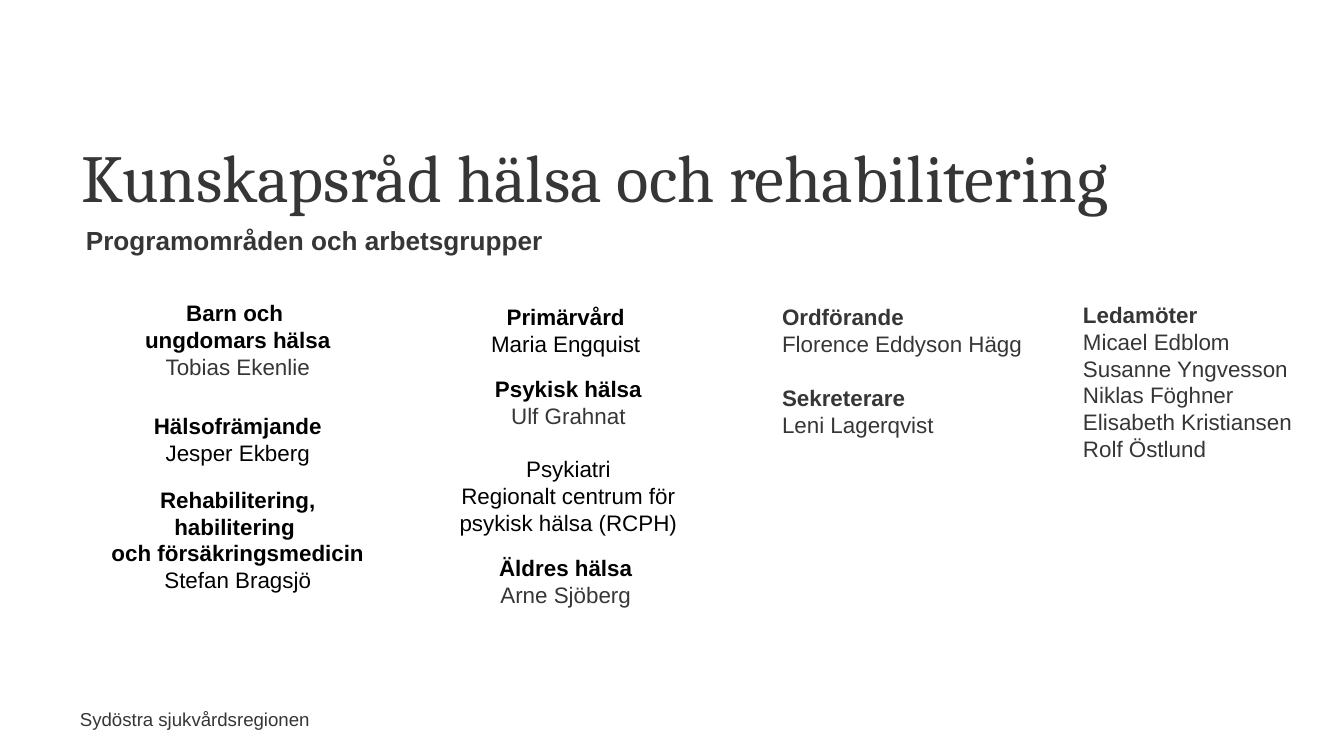
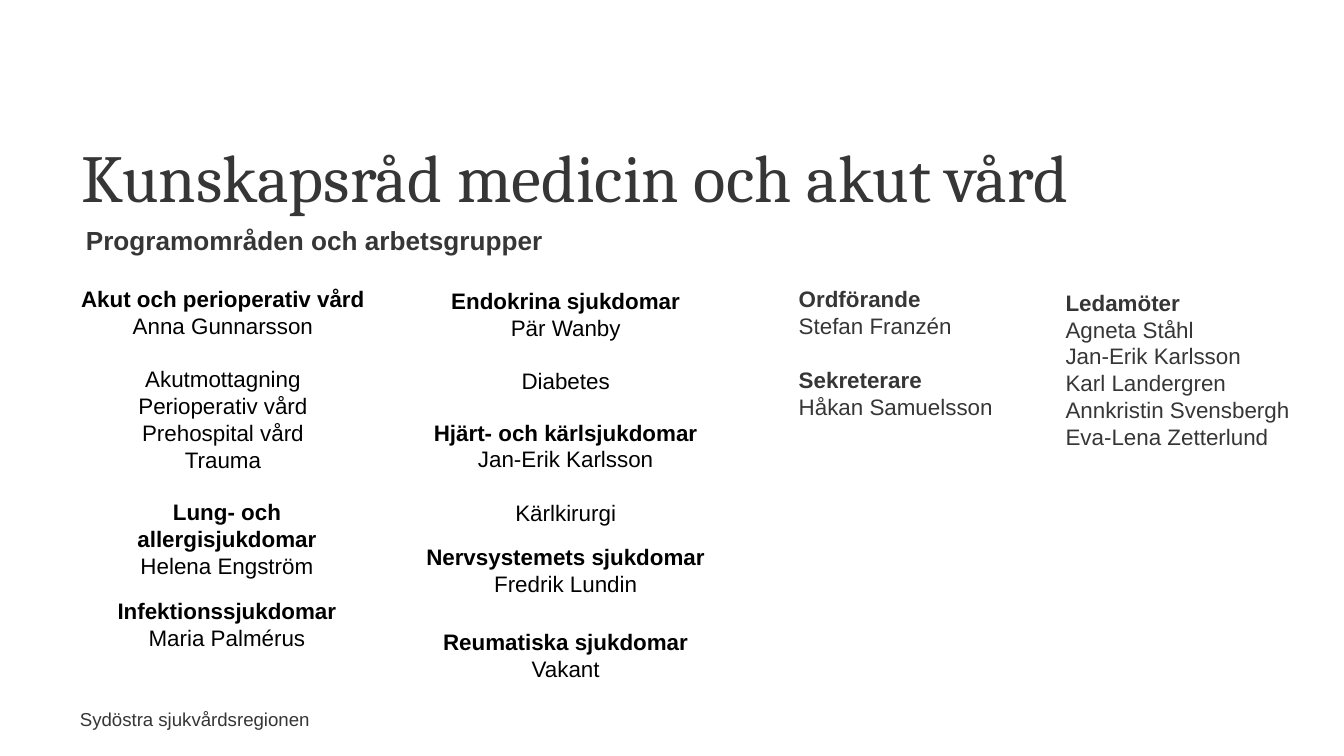
from dataclasses import dataclass
from typing import NamedTuple

from pptx import Presentation
from pptx.dml.color import RGBColor
from pptx.enum.shapes import MSO_SHAPE
from pptx.enum.text import MSO_ANCHOR, MSO_AUTO_SIZE, PP_ALIGN
from pptx.util import Inches, Pt

ROUND = MSO_SHAPE.ROUNDED_RECTANGLE
TOP, MIDDLE = MSO_ANCHOR.TOP, MSO_ANCHOR.MIDDLE
GROW = MSO_AUTO_SIZE.SHAPE_TO_FIT_TEXT
LEFT, CENTER, RIGHT = PP_ALIGN.LEFT, PP_ALIGN.CENTER, PP_ALIGN.RIGHT

WHITE = RGBColor(0xFF, 0xFF, 0xFF)
BLACK = RGBColor(0x00, 0x00, 0x00)
GRAY = RGBColor(0x36, 0x36, 0x36)

SANS, SERIF = "Arial", "Cambria"
BODY = 12
GAP = Pt(14.4)

PAGE = Inches(10)
WIDE = 2.36
LOW, MID = 0.59, 0.79
COL_A, COL_B, COL_C = 0.59, 3.03, 0.51


class Area(NamedTuple):
    left: float
    top: float
    width: float
    height: float


class Line(NamedTuple):
    text: str
    bold: bool = False
    tint: RGBColor = BLACK
    gap: bool = False
    size: int = BODY
    face: str = SANS


@dataclass
class Card:
    area: Area
    head: str
    name: str
    tint: RGBColor = BLACK
    groups: tuple[str, ...] = ()

    def lines(self) -> list[Line]:
        extra = [Line(text, gap=i == 0) for i, text in enumerate(self.groups)]
        return [Line(self.head, True), Line(self.name, tint=self.tint), *extra]


@dataclass
class Council:
    title: str
    cards: list[Card]
    lead_area: Area
    chair: str
    clerk: str
    list_area: Area
    members: list[str]


COUNCILS = [
    Council(
        "Kunskapsråd hälsa och rehabilitering",
        [
            Card(Area(COL_A, 3.62, WIDE, MID),
                 "Rehabilitering, habilitering \voch försäkringsmedicin", "Stefan Bragsjö"),
            Card(Area(COL_B, 4.03, WIDE, LOW), "Äldres hälsa", "Arne Sjöberg", GRAY),
            Card(Area(COL_B, 2.16, WIDE, LOW), "Primärvård", "Maria Engquist"),
            Card(Area(3.05, 2.8, WIDE, 1.18), "Psykisk hälsa", "Ulf Grahnat", GRAY,
                 ("Psykiatri", "Regionalt centrum för psykisk hälsa (RCPH)")),
            Card(Area(COL_A, 2.13, WIDE, MID),
                 "Barn och \vungdomars hälsa", "Tobias Ekenlie", GRAY),
            Card(Area(COL_A, 2.97, WIDE, LOW), "Hälsofrämjande", "Jesper Ekberg"),
        ],
        Area(5.6, 2.09, 3.15, 2.46), "Florence Eddyson Hägg", "Leni Lagerqvist",
        Area(7.96, 2.19, 1.77, 1.51),
        ["Micael Edblom", "Susanne Yngvesson", "Niklas Föghner",
         "Elisabeth Kristiansen", "Rolf Östlund"],
    ),
    Council(
        "Kunskapsråd medicin och akut vård",
        [
            Card(Area(COL_B, 3.12, WIDE, MID), "Hjärt- och kärlsjukdomar",
                 "Jan-Erik Karlsson", groups=("Kärlkirurgi",)),
            Card(Area(COL_B, 3.95, WIDE, LOW), "Nervsystemets sjukdomar", "Fredrik Lundin"),
            Card(Area(COL_C, 4.35, WIDE, LOW), "Infektionssjukdomar", "Maria Palmérus"),
            Card(Area(COL_C, 3.71, WIDE, LOW), "Lung- och allergisjukdomar",
                 "Helena Engström"),
            Card(Area(0.28, 2.13, 2.76, 1.38), "Akut och perioperativ vård",
                 "Anna Gunnarsson",
                 groups=("Akutmottagning", "Perioperativ vård", "Prehospital vård", "Trauma")),
            Card(Area(COL_B, 2.14, WIDE, MID), "Endokrina sjukdomar", "Pär Wanby",
                 groups=("Diabetes",)),
            Card(Area(COL_B, 4.58, WIDE, LOW), "Reumatiska sjukdomar", "Vakant"),
        ],
        Area(5.71, 1.94, 3.15, 2.76), "Stefan Franzén", "Håkan Samuelsson",
        Area(7.83, 2.1, 1.88, 1.51),
        ["Agneta Ståhl", "Jan-Erik Karlsson", "Karl Landergren",
         "Annkristin Svensbergh", "Eva-Lena Zetterlund"],
    ),
]


def write(frame, lines: list[Line], align: PP_ALIGN, anchor: MSO_ANCHOR, wrap: bool) -> None:
    frame.word_wrap = wrap
    frame.vertical_anchor = anchor
    for i, line in enumerate(lines):
        para = frame.add_paragraph() if i else frame.paragraphs[0]
        para.alignment = align
        if line.gap:
            para.space_before = GAP
        para.text = line.text
        font = para.font
        font.name, font.size, font.bold = line.face, Pt(line.size), line.bold
        font.color.rgb = line.tint


def add_text(slide, area: Area, lines: list[Line], align: PP_ALIGN = LEFT,
             anchor: MSO_ANCHOR = TOP, wrap: bool = True, grow: bool = True) -> None:
    box = slide.shapes.add_textbox(*map(Inches, area))
    write(box.text_frame, lines, align, anchor, wrap)
    if grow:
        box.text_frame.auto_size = GROW


def add_panel(slide, area: Area, lines: list[Line], align: PP_ALIGN = CENTER,
              anchor: MSO_ANCHOR = MIDDLE) -> None:
    panel = slide.shapes.add_shape(ROUND, *map(Inches, area))
    panel.shadow.inherit = False
    panel.fill.solid()
    panel.fill.fore_color.rgb = WHITE
    panel.line.fill.background()
    write(panel.text_frame, lines, align, anchor, True)


def add_frame(slide, title: str) -> None:
    add_text(slide, Area(0.48, 5.22, 1.92, 0.27),
             [Line("Sydöstra sjukvårdsregionen", tint=GRAY, size=10)], RIGHT, wrap=False)
    add_text(slide, Area(0.51, 0.84, 9, 0.94),
             [Line(title, tint=GRAY, size=36, face=SERIF)], anchor=MIDDLE, grow=False)


def add_council(deck, item: Council) -> None:
    slide = deck.slides.add_slide(deck.slide_layouts[6])
    add_frame(slide, item.title)
    for card in item.cards:
        add_panel(slide, card.area, card.lines())
    add_text(slide, Area(0.54, 1.62, 5.35, 0.34),
             [Line("Programområden och arbetsgrupper", True, GRAY, size=14)])
    add_panel(slide, item.lead_area, [
        Line("Ordförande", True, GRAY),
        Line(item.chair, tint=GRAY),
        Line("Sekreterare", True, GRAY, gap=True),
        Line(item.clerk, tint=GRAY),
    ], LEFT, TOP)
    names = [Line(name, tint=GRAY) for name in item.members]
    add_text(slide, item.list_area, [Line("Ledamöter", True, GRAY), *names], wrap=False)


def main() -> None:
    deck = Presentation()
    deck.slide_width, deck.slide_height = PAGE, PAGE * 9 // 16
    for item in COUNCILS:
        add_council(deck, item)
    deck.save("out.pptx")


if __name__ == "__main__":
    main()
